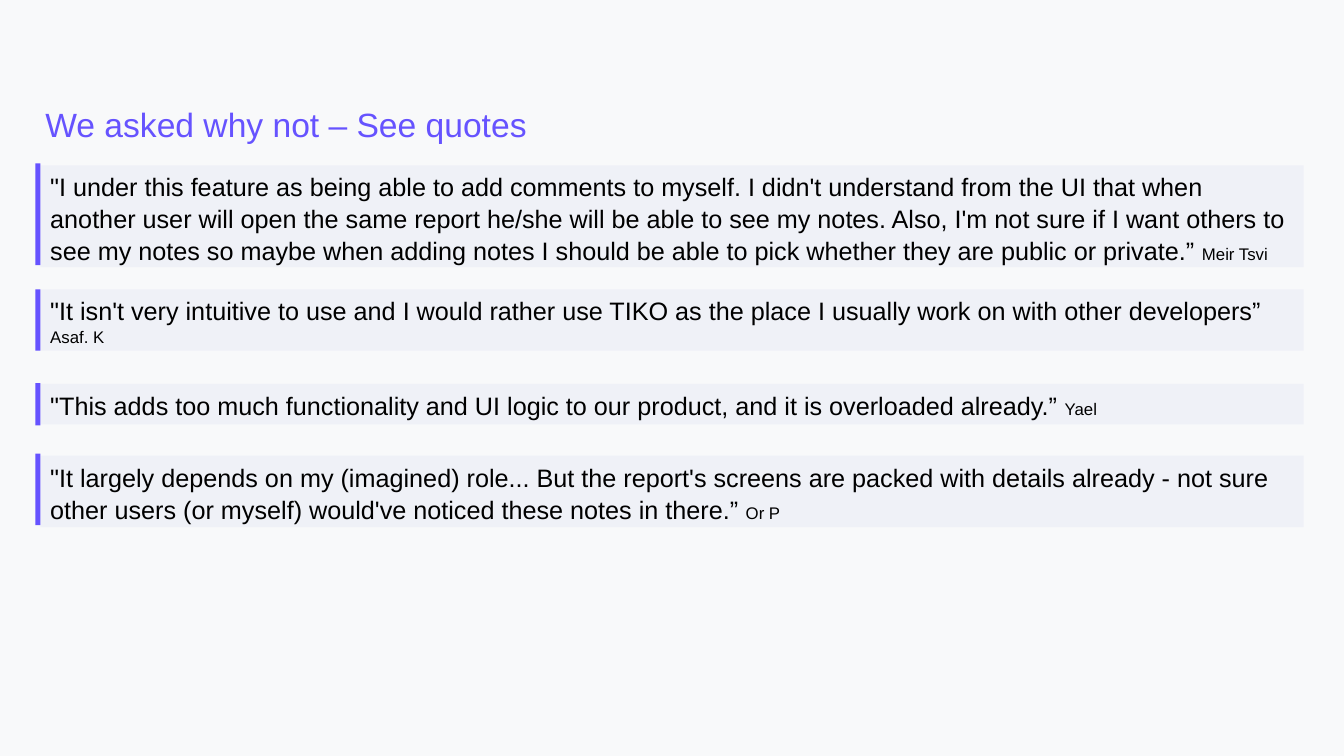
"""Build a slide of user quotes, each in a tinted box with an accent bar."""
from dataclasses import dataclass

from lxml.etree import SubElement
from pptx import Presentation
from pptx.dml.color import RGBColor
from pptx.enum.shapes import MSO_SHAPE as Shape
from pptx.enum.text import MSO_ANCHOR as Anchor, MSO_AUTO_SIZE as Fit, PP_ALIGN as Align
from pptx.oxml.ns import qn
from pptx.util import Pt

PX = 9144
HUES = {"page": "F8F9FA", "accent": "6653FF", "tint": "BEC6EA", "ink": "000000"}
LEFT, WIDE, BAR = 40, 1253, 5


@dataclass
class Quote:
    top: int
    high: int
    bar_top: int
    bar_high: int
    paras: list[list[tuple[str, int]]]


QUOTES = [
    Quote(164, 101, 162, 101, [[
        ("\"I under this feature as being able to add comments to myself. "
         "I didn't understand from the UI that when another user will open the same "
         "report he/she will be able to see my notes. Also, I'm not sure if I want "
         "others to see my notes so maybe when adding notes I should be able to pick "
         "whether they are public or private.” ", 18),
        ("Meir Tsvi", 12)]]),
    Quote(287, 61, 287, 61, [
        [("\"It isn't very intuitive to use and I would rather use TIKO as the place "
          "I usually work on with other developers”", 18)],
        [("Asaf. K", 12)]]),
    Quote(381, 40, 380, 42, [[
        ("\"This adds too much functionality and UI logic to our product, "
         "and it is overloaded already.” ", 18),
        ("Yael", 12)]]),
    Quote(452, 71, 450, 71, [[
        ("\"It largely depends on my (imagined) role... But the report's screens are "
         "packed with details already - not sure other users (or myself) would've "
         "noticed these notes in there.” ", 18),
        ("Or P", 12)]]),
]


def write(shape, paras: list[list[tuple[str, int]]], *, hue: str, side: int = 10) -> None:
    frame = shape.text_frame
    frame.word_wrap = True
    frame.auto_size = Fit.NONE
    frame.vertical_anchor = Anchor.TOP
    frame.margin_left = frame.margin_right = side * PX
    frame.margin_top = frame.margin_bottom = 5 * PX
    for i, runs in enumerate(paras):
        para = frame.add_paragraph() if i else frame.paragraphs[0]
        para.alignment = Align.LEFT
        para.line_spacing = 1.05
        para.space_before = para.space_after = Pt(0)
        for text, size in runs:
            run = para.add_run()
            run.text = text
            run.font.name = "Arial"
            run.font.size = Pt(size)
            run.font.color.rgb = RGBColor.from_string(HUES[hue])


def block(slide, left: int, top: int, wide: int, high: int, *, hue: str, alpha: int = 100):
    shape = slide.shapes.add_shape(Shape.RECTANGLE, left * PX, top * PX, wide * PX, high * PX)
    shape.shadow.inherit = False
    shape.line.fill.background()
    shape.fill.solid()
    shape.fill.fore_color.rgb = RGBColor.from_string(HUES[hue])
    if alpha < 100:
        color = shape.fill._xPr.find(qn("a:solidFill"))[0]
        SubElement(color, qn("a:alpha")).set("val", str(alpha * 1000))
    return shape


def draw(slide, quote: Quote) -> None:
    box = block(slide, LEFT, quote.top, WIDE, quote.high, hue="tint", alpha=15)
    write(box, quote.paras, hue="ink")
    block(slide, LEFT - BAR, quote.bar_top, BAR, quote.bar_high, hue="accent")


def main() -> None:
    deck = Presentation()
    deck.slide_width, deck.slide_height = 1333 * PX, 750 * PX
    slide = deck.slides.add_slide(deck.slide_layouts[5])
    slide.background.fill.solid()
    slide.background.fill.fore_color.rgb = RGBColor.from_string(HUES["page"])
    title = slide.shapes.title
    title.left, title.top, title.width, title.height = (n * PX for n in (LEFT, 96, 1180, 126))
    write(title, [[("We asked why not – See quotes", 24)]], hue="accent", side=5)
    for quote in QUOTES:
        draw(slide, quote)
    deck.save("out.pptx")


if __name__ == "__main__":
    main()
